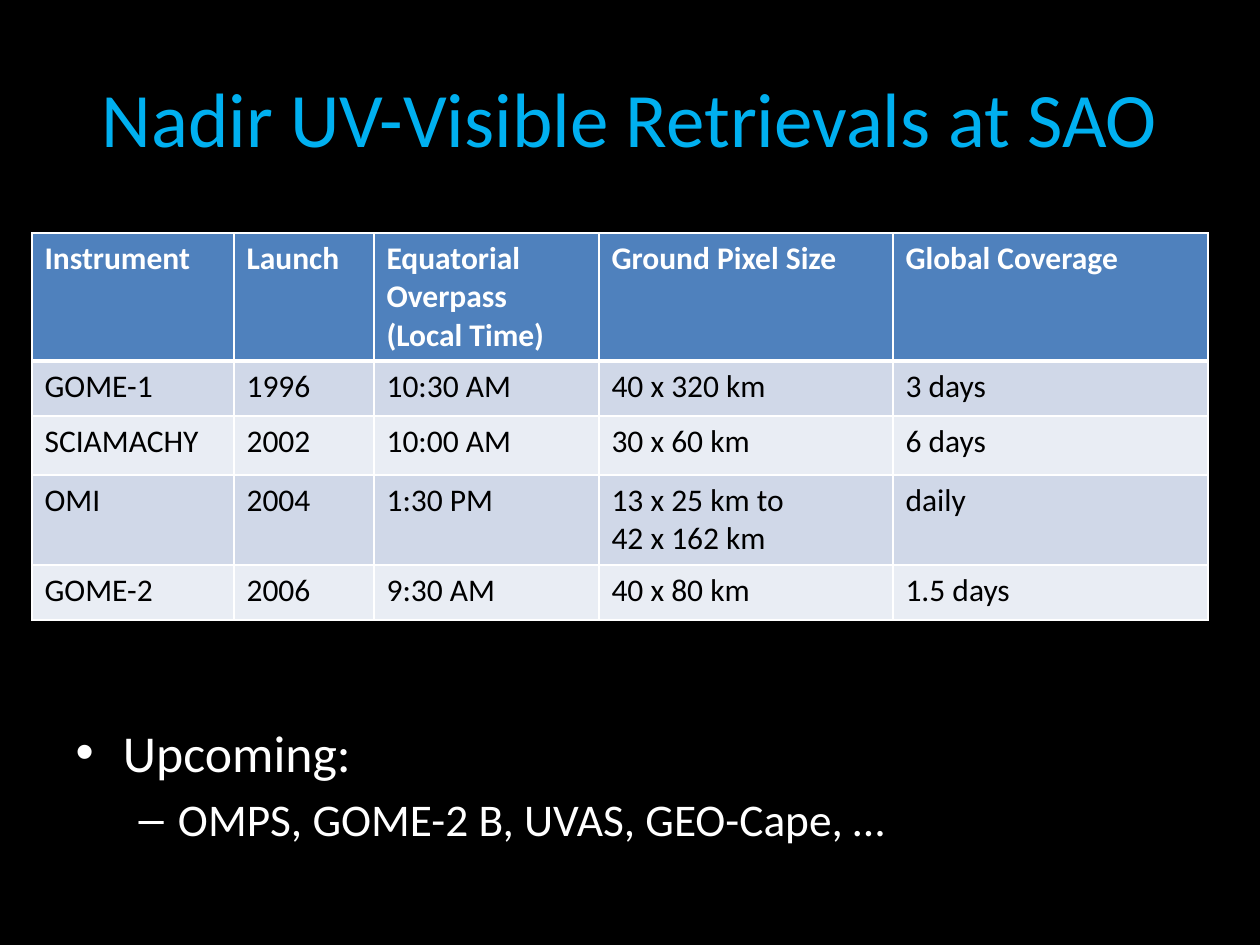
from dataclasses import dataclass

import lxml.etree
import pptx
import pptx.dml.color
import pptx.enum.text
import pptx.oxml.ns
import pptx.util

EMU_PER_PX = 914400 / 126
FONT = "Calibri"
BLACK, WHITE, SKY = "000000", "FFFFFF", "00B0F0"
HEADER_FILL = "4F81BD"
BAND_FILLS = ("D0D8E8", "E9EDF4")


@dataclass(frozen=True)
class Instrument:
    name: str
    launch: str
    overpass: str
    pixel_size: str
    coverage: str
    row_height: int

    def texts(self) -> tuple[str, ...]:
        return self.name, self.launch, self.overpass, self.pixel_size, self.coverage


HEADER = Instrument("Instrument", "Launch", "Equatorial Overpass (Local Time)",
                    "Ground Pixel Size", "Global Coverage", 128)
INSTRUMENTS = (
    Instrument("GOME-1", "1996", "10:30 AM", "40 x 320 km", "3 days", 55),
    Instrument("SCIAMACHY", "2002", "10:00 AM", "30 x 60 km", "6 days", 59),
    Instrument("OMI", "2004", "1:30 PM", "13 x 25 km to\n42 x 162 km", "daily", 90),
    Instrument("GOME-2", "2006", "9:30 AM", "40 x 80 km", "1.5 days", 55),
)
COLUMN_WIDTHS = (202, 140, 225, 294, 315)


def px(length: int) -> pptx.util.Emu:
    return pptx.util.Emu(round(length * EMU_PER_PX))


def rgb(color: str) -> pptx.dml.color.RGBColor:
    return pptx.dml.color.RGBColor.from_string(color)


def write_text(text_frame, text: str, *, size: float, color: str, bold: bool = False,
               alignment=None, level: int = 0, append: bool = False) -> None:
    """Write each line of text as one paragraph."""
    for index, line in enumerate(text.split("\n")):
        is_first = index == 0 and not append
        paragraph = text_frame.paragraphs[0] if is_first else text_frame.add_paragraph()
        paragraph.level = level
        paragraph.alignment = alignment
        if is_first:
            paragraph.space_before = pptx.util.Pt(0)
        run = paragraph.add_run()
        run.text = line
        run.font.name = FONT
        run.font.size = pptx.util.Pt(size)
        run.font.bold = bold
        run.font.color.rgb = rgb(color)


def place(shape, left: int, top: int, width: int, height: int) -> None:
    shape.left, shape.top = px(left), px(top)
    shape.width, shape.height = px(width), px(height)
    shape.text_frame.auto_size = pptx.enum.text.MSO_AUTO_SIZE.NONE


def set_borders(cell, *, top: int, bottom: int) -> None:
    properties = cell._tc.get_or_add_tcPr()
    for side, points in (("L", 1), ("R", 1), ("T", top), ("B", bottom)):
        line = lxml.etree.SubElement(properties, pptx.oxml.ns.qn(f"a:ln{side}"),
                                     w=str(pptx.util.Pt(points)))
        fill = lxml.etree.SubElement(line, pptx.oxml.ns.qn("a:solidFill"))
        lxml.etree.SubElement(fill, pptx.oxml.ns.qn("a:srgbClr"), val=WHITE)


def add_instrument_table(slide, left: int, top: int) -> None:
    rows = (HEADER, *INSTRUMENTS)
    height = sum(row.row_height for row in rows)
    table = slide.shapes.add_table(len(rows), len(COLUMN_WIDTHS), px(left), px(top),
                                   px(sum(COLUMN_WIDTHS)), px(height)).table
    for column, width in zip(table.columns, COLUMN_WIDTHS):
        column.width = px(width)
    for row_index, row in enumerate(rows):
        table.rows[row_index].height = px(row.row_height)
        is_header = row_index == 0
        fill = HEADER_FILL if is_header else BAND_FILLS[(row_index - 1) % 2]
        for column_index, text in enumerate(row.texts()):
            cell = table.cell(row_index, column_index)
            # The thick rule lies between the header and the first band
            set_borders(cell, top=3 if row_index == 1 else 1, bottom=3 if is_header else 1)
            cell.fill.solid()
            cell.fill.fore_color.rgb = rgb(fill)
            write_text(cell.text_frame, text, size=18, bold=is_header,
                       color=WHITE if is_header else BLACK)


def main() -> None:
    presentation = pptx.Presentation()
    presentation.slide_width, presentation.slide_height = px(1260), px(945)
    slide = presentation.slides.add_slide(presentation.slide_layouts[1])
    slide.background.fill.solid()
    slide.background.fill.fore_color.rgb = rgb(BLACK)

    # Title
    title = slide.shapes.title
    place(title, 63, 38, 1134, 157)
    title.text_frame.vertical_anchor = pptx.enum.text.MSO_ANCHOR.MIDDLE
    write_text(title.text_frame, "Nadir UV-Visible Retrievals at SAO", size=44, color=SKY,
               alignment=pptx.enum.text.PP_ALIGN.CENTER)

    # Instruments in orbit
    add_instrument_table(slide, 32, 233)

    # Upcoming instruments, with the bullets of the template
    body = slide.placeholders[1]
    place(body, 63, 714, 1134, 136)
    write_text(body.text_frame, "Upcoming:", size=29.6, color=WHITE)
    write_text(body.text_frame, "OMPS, GOME-2 B, UVAS, GEO-Cape, …", size=25.9,
               color=WHITE, level=1, append=True)

    presentation.save("out.pptx")


if __name__ == "__main__":
    main()
